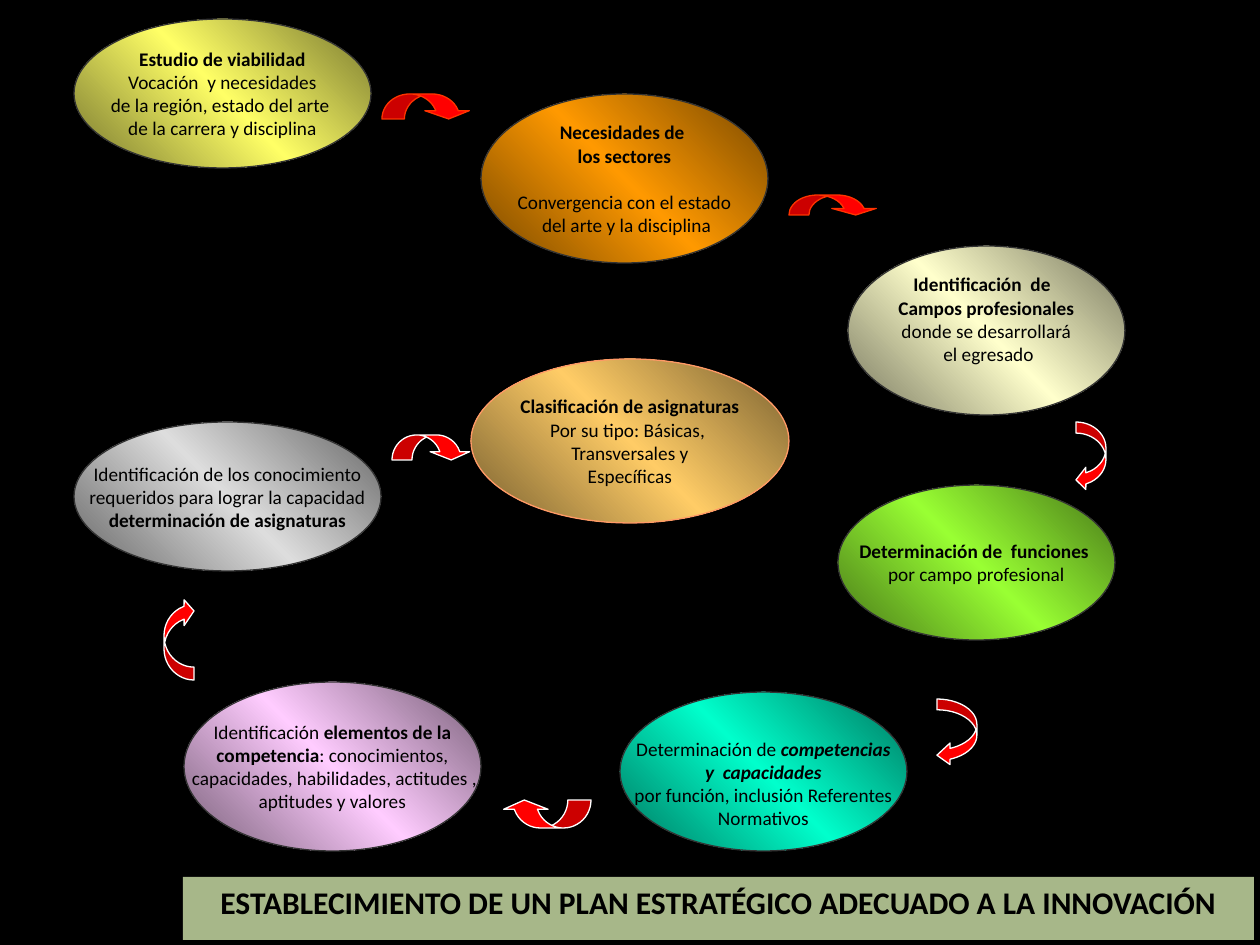
from copy import deepcopy

from pptx import Presentation
from pptx.dml.color import RGBColor
from pptx.enum.shapes import MSO_SHAPE as SHAPE
from pptx.enum.text import MSO_ANCHOR as ANCHOR, PP_ALIGN as ALIGN
from pptx.oxml.ns import qn
from pptx.util import Pt

PX = 914400 // 126
LINE_HEIGHT = 23
BOLD = {"bold": True}
BOLD_ITALIC = {"bold": True, "italic": True}


def color(hex_string):
    return RGBColor.from_string(hex_string)


def add_line(paragraph, runs, size):
    """Fill a centred paragraph with (text, format) runs."""
    paragraph.alignment = ALIGN.CENTER
    for text, formats in runs:
        run = paragraph.add_run()
        run.text = text
        run.font.color.rgb = color("000000")
        values = {"name": "Calibri", "size": Pt(size), "bold": False, "italic": False}
        for name, value in (values | formats).items():
            setattr(run.font, name, value)


presentation = Presentation()
presentation.slide_width, presentation.slide_height = 1260 * 914400 // 126, 945 * 914400 // 126
slide = presentation.slides.add_slide(presentation.slide_layouts[5])
slide.background.fill.solid()
slide.background.fill.fore_color.rgb = color("000000")

# Steps: box, edge colour, centre colour, outline, text offset in lines, lines of runs
steps = [
    ((481, 94, 287, 169), "764700", "FF9900", "333333", 0, [
        [("Necesidades de ", BOLD)],
        [("los sectores", BOLD)],
        [("Convergencia con el estado", {})],
        [(" del arte y la disciplina", {})]]),
    ((848, 246, 277, 169), "76765E", "FFFFCC", "333333", -1, [
        [("Identificación  de  ", BOLD)],
        [("Campos profesionales", BOLD)],
        [("donde se desarrollará", {})],
        [(" el egresado", {})]]),
    ((74, 19, 297, 149), "76762F", "FFFF66", "333333", 0, [
        [("Estudio de viabilidad", BOLD)],
        [("Vocación  y necesidades", {})],
        [("de la región, estado del arte ", {})],
        [("de la carrera y disciplina", {})]]),
    ((838, 485, 277, 155), "477618", "99FF33", "333333", 0, [
        [("Determinación de  funciones ", BOLD)],
        [("por campo profesional", {})]]),
    ((184, 682, 297, 169), "765E76", "FFCCFF", "333333", 0, [
        [("Identificación ", {}), ("elementos de la", BOLD)],
        [("competencia", BOLD), (": conocimientos,", {})],
        [(" capacidades, habilidades, actitudes ,", {})],
        [("aptitudes y valores", {})]]),
    ((471, 359, 318, 164), "765E2F", "FFCC66", "FF9966", 0, [
        [("Clasificación de asignaturas", BOLD)],
        [("Por su tipo: Básicas, ", {})],
        [("Transversales y", {})],
        [("Específicas", {})]]),
    ((74, 422, 307, 149), "666666", "DDDDDD", "333333", 0, [
        [("Identificación de los conocimiento", {})],
        [("requeridos para lograr la capacidad", {})],
        [("determinación de asignaturas", BOLD)]]),
    ((620, 692, 287, 159), "00765E", "00FFCC", "333333", 1, [
        [("Determinación de ", {}), ("competencias", BOLD_ITALIC)],
        [(" y  capacidades ", BOLD_ITALIC)],
        [("por función, inclusión Referentes", {})],
        [("Normativos", {})]]),
]
for box, edge, centre, outline, offset, lines in steps:
    ellipse = slide.shapes.add_shape(SHAPE.OVAL, *(n * PX for n in box))
    ellipse.shadow.inherit = False
    ellipse.fill.gradient()
    ellipse.fill.gradient_angle = 45
    stop_list = ellipse.fill._xPr.find(".//" + qn("a:gsLst"))
    stop_list.append(deepcopy(stop_list[-1]))
    for stop, position, shade in zip(ellipse.fill.gradient_stops, (0, 0.5, 1), (edge, centre, edge)):
        stop.position = position
        stop.color.rgb = color(shade)
    ellipse.line.color.rgb = color(outline)
    ellipse.line.width = Pt(0.75)

    frame = ellipse.text_frame
    frame_format = {
        "word_wrap": False, "vertical_anchor": ANCHOR.MIDDLE,
        "margin_top": max(offset, 0) * LINE_HEIGHT * PX,
        "margin_bottom": max(-offset, 0) * LINE_HEIGHT * PX,
    }
    for name, value in frame_format.items():
        setattr(frame, name, value)
    for index, runs in enumerate(lines):
        paragraph = frame.add_paragraph() if index else frame.paragraphs[0]
        add_line(paragraph, runs, 11)
        if runs[0][0].startswith("Convergencia"):
            paragraph.space_before = LINE_HEIGHT * PX

# Arrows: preset, box, outline, rotation, band thickness
arrows = [
    (SHAPE.CURVED_DOWN_ARROW, (382, 94, 89, 25), "FF3300", 0, 0.9),
    (SHAPE.CURVED_DOWN_ARROW, (789, 195, 89, 20), "FF3300", 0, 1.13),
    (SHAPE.CURVED_LEFT_ARROW, (1076, 422, 30, 69), "FFFFFF", 0, 0.37),
    (SHAPE.CURVED_LEFT_ARROW, (937, 699, 40, 67), "FFFFFF", 0, 0.27),
    (SHAPE.CURVED_DOWN_ARROW, (392, 435, 79, 25), "FFFFFF", 0, 0.8),
    (SHAPE.CURVED_DOWN_ARROW, (502, 800, 89, 28), "FFFFFF", 180, 0.83),
    (SHAPE.CURVED_LEFT_ARROW, (164, 598, 30, 82), "FFFFFF", 180, 0.43),
]
for preset, box, outline, rotation, thickness in arrows:
    arrow = slide.shapes.add_shape(preset, *(n * PX for n in box))
    arrow.shadow.inherit = False
    arrow.rotation = rotation
    for index, value in enumerate((thickness, 2 * thickness, 0.33)):
        arrow.adjustments[index] = value
    arrow.fill.solid()
    arrow.fill.fore_color.rgb = color("FF0000")
    arrow.line.color.rgb = color(outline)
    arrow.line.width = Pt(0.75)

title = slide.shapes.title
for name, value in zip(("left", "top", "width", "height"), (183, 877, 1071, 63)):
    setattr(title, name, value * PX)
title.fill.solid()
title.fill.fore_color.rgb = color("A7B789")
title.text_frame.vertical_anchor = ANCHOR.TOP
title.text_frame.word_wrap = True
heading = title.text_frame.paragraphs[0]
heading.space_before = Pt(4)
add_line(heading, [("ESTABLECIMIENTO DE UN PLAN ESTRATÉGICO ADECUADO A LA INNOVACIÓN", BOLD)], 18)

presentation.save("out.pptx")
